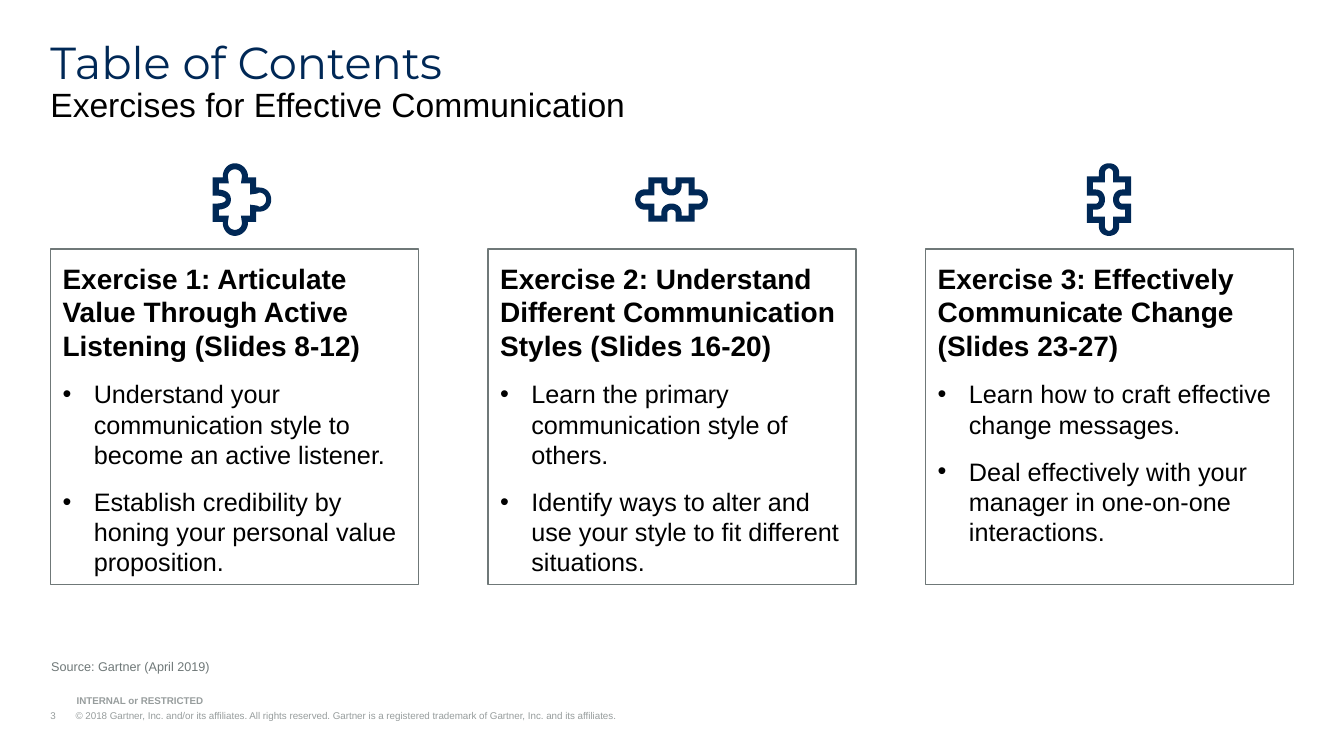
from lxml import etree
from pptx import Presentation
from pptx.dml.color import RGBColor
from pptx.enum.shapes import MSO_SHAPE as Shape
from pptx.enum.text import MSO_ANCHOR as Anchor, PP_ALIGN as Align
from pptx.oxml.ns import qn
from pptx.util import Inches, Pt

COLORS = {"navy": "002856", "black": "000000", "border": "6F7878", "footer": "979D9D"}

CARD_LEFT, CARD_TOP, CARD_WIDTH, CARD_HEIGHT, CARD_STEP = 0.5, 2.47, 3.65, 3.33, 4.34

CARDS = [
    ("Exercise 1: Articulate Value Through Active Listening (Slides 8-12)",
     ["Understand your communication style to become an active listener.",
      "Establish credibility by honing your personal value proposition."]),
    ("Exercise 2: Understand Different Communication Styles (Slides 16-20)",
     ["Learn the primary communication style of others.",
      "Identify ways to alter and use your style to fit different situations."]),
    ("Exercise 3: Effectively Communicate Change (Slides 23-27)",
     ["Learn how to craft effective change messages.",
      "Deal effectively with your manager in one-on-one interactions."]),
]

# Puzzle outlines around (0, 0): pairs are corners, six numbers are a curve.
# The knob piece gives its upper half, the link piece its upper left quarter.
KNOB_OUTER = [(-.09, 0), (-.09, -.03, -.15, -.04, -.19, -.04), (-.22, -.04),
              (-.22, -.22), (-.12, -.22), (-.12, -.23),
              (-.12, -.3, -.07, -.36, 0, -.36), (.07, -.36, .13, -.3, .13, -.23),
              (.13, -.22), (.21, -.22), (.21, -.12), (.24, -.12),
              (.31, -.12, .36, -.07, .36, 0)]
KNOB_INNER = [(-.04, 0), (-.04, -.03, -.05, -.09, -.16, -.1), (-.16, -.16),
              (-.06, -.16), (-.07, -.23), (-.07, -.27, -.04, -.3, 0, -.3),
              (.04, -.3, .07, -.27, .07, -.23), (.06, -.16), (.15, -.16),
              (.15, -.05), (.22, -.06), (.24, -.07), (.28, -.07, .31, -.04, .31, 0)]
LINK_OUTER = [(0, -.1), (-.02, -.1, -.04, -.11, -.04, -.13), (-.04, -.22),
              (-.23, -.22), (-.23, -.1), (-.27, -.1), (-.32, -.1, -.36, -.06, -.36, 0)]
LINK_INNER = [(0, -.04), (-.06, -.04, -.1, -.08, -.1, -.13), (-.1, -.16),
              (-.17, -.16), (-.17, -.04), (-.27, -.04), (-.29, -.04, -.31, -.02, -.31, 0)]


def flatten(segments, steps=10):
    """Turn corners and curves into a list of points."""
    points = []
    for segment in segments:
        if len(segment) == 2:
            points.append(segment)
            continue
        controls = [points[-1], segment[:2], segment[2:4], segment[4:]]
        for step in range(1, steps + 1):
            t = step / steps
            weights = [(1 - t) ** 3, 3 * t * (1 - t) ** 2, 3 * t * t * (1 - t), t ** 3]
            points.append(tuple(sum(w * c[axis] for w, c in zip(weights, controls))
                                for axis in (0, 1)))
    return points


def mirror_down(half):
    return half + [(x, -y) for x, y in reversed(half)]


def knob_contour(segments):
    return mirror_down(flatten(segments))


def link_contour(segments):
    quarter = flatten(segments)
    return mirror_down(quarter[::-1] + [(-x, y) for x, y in quarter])


def turned(contour):
    return [(-y, x) for x, y in contour]


def add_icon(slide, center_x, center_y, contours):
    builder = None
    for contour in contours:
        points = [(Inches(center_x + x), Inches(center_y + y)) for x, y in contour]
        if builder is None:
            builder = slide.shapes.build_freeform(*points[0], scale=1.0)
        else:
            builder.move_to(*points[0])
        builder.add_line_segments(points[1:], close=True)
    icon = builder.convert_to_shape()
    icon.shadow.inherit = False
    icon.fill.solid()
    icon.fill.fore_color.rgb = RGBColor.from_string(COLORS["navy"])
    icon.line.fill.background()


def add_run(paragraph, text, size, color, bold=False, font="Arial"):
    run = paragraph.add_run()
    run.text = text
    run.font.name = font
    run.font.size = Pt(size)
    run.font.bold = bold
    run.font.color.rgb = RGBColor.from_string(COLORS[color])


def set_frame(frame, inset, anchor=Anchor.TOP):
    frame.word_wrap = True
    frame.vertical_anchor = anchor
    frame.margin_left = frame.margin_right = Inches(inset)
    frame.margin_top = frame.margin_bottom = Inches(inset)


def add_text_box(slide, left, top, width, height, inset=0, anchor=Anchor.TOP):
    box = slide.shapes.add_textbox(Inches(left), Inches(top), Inches(width), Inches(height))
    set_frame(box.text_frame, inset, anchor)
    return box.text_frame.paragraphs[0]


def set_hanging(paragraph, indent):
    properties = paragraph._p.get_or_add_pPr()
    properties.set("marL", str(Inches(indent)))
    properties.set("indent", str(-Inches(indent)))
    return properties


def add_bullet(paragraph):
    properties = set_hanging(paragraph, 0.31)
    bullet_color = etree.SubElement(properties, qn("a:buClr"))
    etree.SubElement(bullet_color, qn("a:srgbClr"), val=COLORS["black"])
    etree.SubElement(properties, qn("a:buFont"), typeface="Arial")
    etree.SubElement(properties, qn("a:buChar"), char="•")


def add_card(slide, left, heading, bullets):
    card = slide.shapes.add_shape(Shape.RECTANGLE, Inches(left), Inches(CARD_TOP),
                                  Inches(CARD_WIDTH), Inches(CARD_HEIGHT))
    card.shadow.inherit = False
    card.fill.background()
    card.line.color.rgb = RGBColor.from_string(COLORS["border"])
    card.line.width = Pt(1)
    frame = card.text_frame
    set_frame(frame, 0.12)
    for index, text in enumerate([heading] + bullets):
        paragraph = frame.add_paragraph() if index else frame.paragraphs[0]
        if index:
            add_bullet(paragraph)
        paragraph.alignment = Align.LEFT
        paragraph.space_after = Pt(12)
        add_run(paragraph, text, 18 if index else 20, "black", bold=not index)


def add_title(slide):
    paragraph = add_text_box(slide, 0.5, 0.4, 12.33, 0.48)
    paragraph.line_spacing = 0.9
    add_run(paragraph, "Table of Contents", 32, "navy", font="Montserrat")
    paragraph.add_line_break()
    add_run(paragraph, "Exercises for Effective Communication", 24, "black")


def add_footer(slide, left, top, width, text, bold=False):
    paragraph = add_text_box(slide, left, top, width, 0.12, anchor=Anchor.BOTTOM)
    tabs = etree.SubElement(set_hanging(paragraph, 0.25), qn("a:tabLst"))
    etree.SubElement(tabs, qn("a:tab"), pos=str(Inches(0.25)), algn="l")
    add_run(paragraph, text, 7, "footer", bold)


def main():
    presentation = Presentation()
    presentation.slide_width, presentation.slide_height = Inches(13.33), Inches(7.5)
    slide = presentation.slides.add_slide(presentation.slide_layouts[6])

    add_title(slide)

    # Exercise cards
    for index, (heading, bullets) in enumerate(CARDS):
        add_card(slide, CARD_LEFT + index * CARD_STEP, heading, bullets)

    # Puzzle icons above the cards
    knob = [knob_contour(KNOB_OUTER), knob_contour(KNOB_INNER)]
    link = [link_contour(LINK_OUTER), link_contour(LINK_INNER)]
    add_icon(slide, 2.33, 1.98, knob)
    add_icon(slide, 6.66, 1.98, link)
    add_icon(slide, 11, 1.98, [turned(contour) for contour in link])

    # Source and footer
    source = add_text_box(slide, 0.41, 6.49, 10.15, 0.25, inset=0.1, anchor=Anchor.MIDDLE)
    add_run(source, "Source: Gartner (April 2019)", 9, "border")
    add_footer(slide, 0.76, 6.89, 2.53, "INTERNAL or RESTRICTED", bold=True)
    add_footer(slide, 0.5, 7.04, 7.99,
               "3\t© 2018 Gartner, Inc. and/or its affiliates. All rights reserved. "
               "Gartner is a registered trademark of Gartner, Inc. and its affiliates.")

    presentation.save("out.pptx")


if __name__ == "__main__":
    main()
